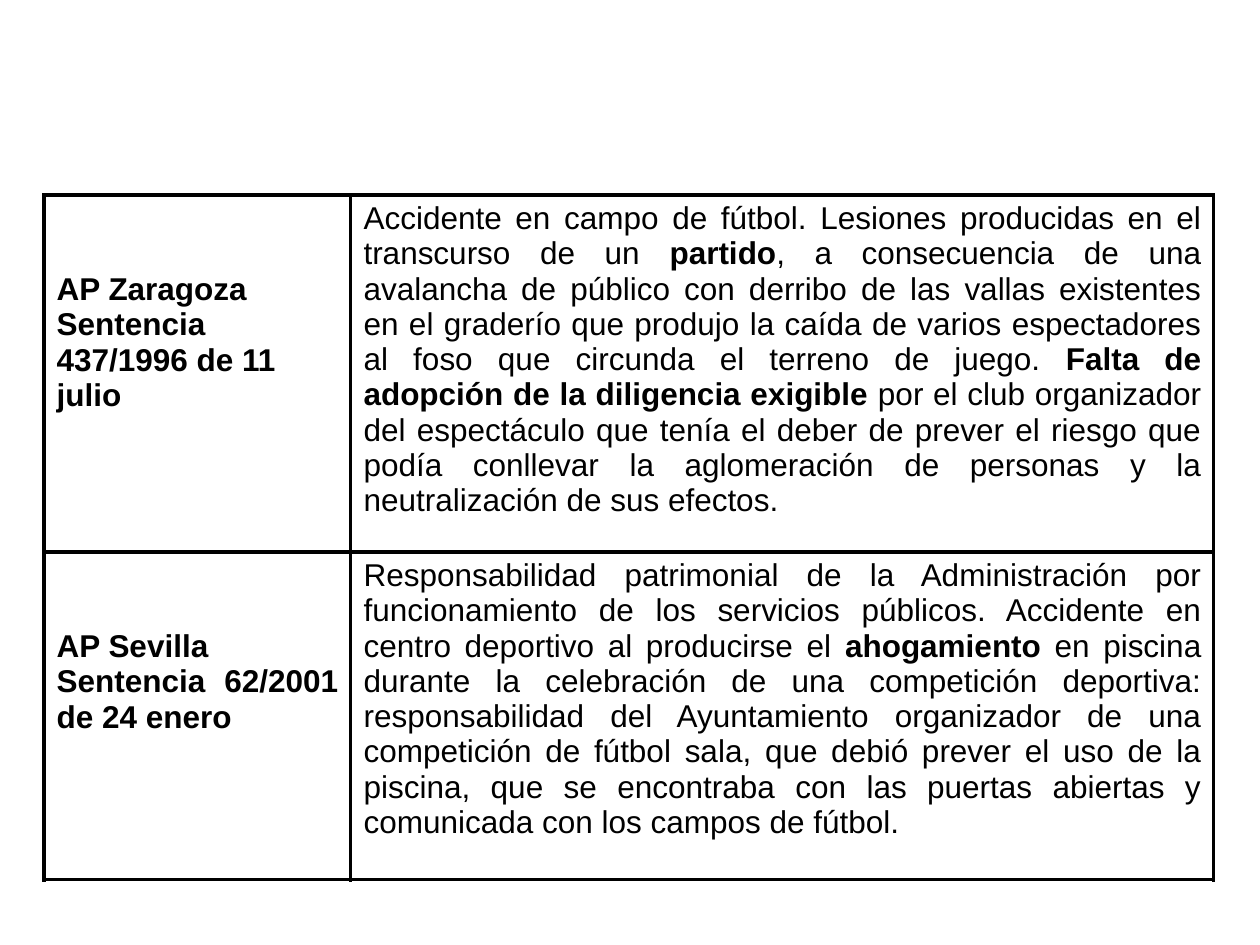
from lxml import etree
from pptx import Presentation
from pptx.dml.color import RGBColor
from pptx.enum.text import MSO_ANCHOR, PP_ALIGN
from pptx.oxml.ns import qn
from pptx.util import Emu, Pt

LEFT, JUSTIFY = PP_ALIGN.LEFT, PP_ALIGN.JUSTIFY
TOP = MSO_ANCHOR.TOP
PX_PER_INCH = 126
BLACK = "000000"
BORDER_WIDTH = Pt(2)
CASE_TOP, SUMMARY_TOP = 77, 6  # cell top margins in px
COLUMN_WIDTHS = (307, 863)
ROW_HEIGHTS = (357, 328)

# Each cell is a list of paragraphs; each paragraph is a list of (text, bold) runs
RULINGS = [
    {
        "case": [[("AP Zaragoza Sentencia 437/1996 de 11 julio", True)]],
        "case_align": LEFT,
        "summary": [[
            ("Accidente en campo de fútbol. Lesiones producidas en el transcurso de un ", False),
            ("partido", True),
            (", a consecuencia de una avalancha de público con derribo de las vallas "
             "existentes en el graderío que produjo la caída de varios espectadores al foso "
             "que circunda el terreno de juego. ", False),
            ("Falta de adopción de la diligencia exigible ", True),
            ("por el club organizador del espectáculo que tenía el deber de prever el riesgo "
             "que podía conllevar la aglomeración de personas y la neutralización de sus "
             "efectos.", False),
        ]],
    },
    {
        "case": [[("AP Sevilla", True)], [("Sentencia 62/2001 de 24 enero", True)]],
        "case_align": JUSTIFY,
        "summary": [[
            ("Responsabilidad patrimonial de la Administración por funcionamiento de los "
             "servicios públicos. Accidente en centro deportivo al producirse el ", False),
            ("ahogamiento", True),
            (" en piscina durante la celebración de una competición deportiva: "
             "responsabilidad del Ayuntamiento organizador de una competición de fútbol sala, "
             "que debió prever el uso de la piscina, que se encontraba con las puertas "
             "abiertas y comunicada con los campos de fútbol.", False),
        ]],
    },
]


def px(length):
    return Emu(round(length * 914400 / PX_PER_INCH))


def color(hex_value):
    return RGBColor.from_string(hex_value)


def add_text(paragraph, text, size=18, bold=False, font="Arial", hex_value=BLACK):
    run = paragraph.add_run()
    run.text = text
    run.font.name = font
    run.font.size = Pt(size)
    run.font.bold = bold
    run.font.color.rgb = color(hex_value)


def set_borders(cell, hex_value=BLACK):
    properties = cell._tc.get_or_add_tcPr()
    for position, side in enumerate(("a:lnL", "a:lnR", "a:lnT", "a:lnB")):
        line = etree.Element(qn(side), w=str(BORDER_WIDTH))
        fill = etree.SubElement(line, qn("a:solidFill"))
        etree.SubElement(fill, qn("a:srgbClr"), val=hex_value)
        properties.insert(position, line)


def fill_cell(cell, paragraphs, align, margin_top):
    cell.fill.background()
    cell.vertical_anchor = TOP
    cell.margin_top = px(margin_top)
    set_borders(cell)
    frame = cell.text_frame
    for index, runs in enumerate(paragraphs):
        paragraph = frame.add_paragraph() if index else frame.paragraphs[0]
        paragraph.alignment = align
        for text, bold in runs:
            add_text(paragraph, text, bold=bold)


def add_rulings_table(slide, left, top):
    table = slide.shapes.add_table(
        len(RULINGS), len(COLUMN_WIDTHS), px(left), px(top),
        px(sum(COLUMN_WIDTHS)), px(sum(ROW_HEIGHTS))).table
    table.first_row = table.horz_banding = False
    for column, width in zip(table.columns, COLUMN_WIDTHS):
        column.width = px(width)
    for row, height, ruling in zip(table.rows, ROW_HEIGHTS, RULINGS):
        row.height = px(height)
        case_cell, summary_cell = row.cells
        fill_cell(case_cell, ruling["case"], ruling["case_align"], CASE_TOP)
        fill_cell(summary_cell, ruling["summary"], JUSTIFY, SUMMARY_TOP)


def main():
    presentation = Presentation()
    presentation.slide_width, presentation.slide_height = px(1260), px(945)
    # Blank layout: the slide holds only the table
    slide = presentation.slides.add_slide(presentation.slide_layouts[6])
    add_rulings_table(slide, left=44, top=195)
    presentation.save("out.pptx")


if __name__ == "__main__":
    main()
